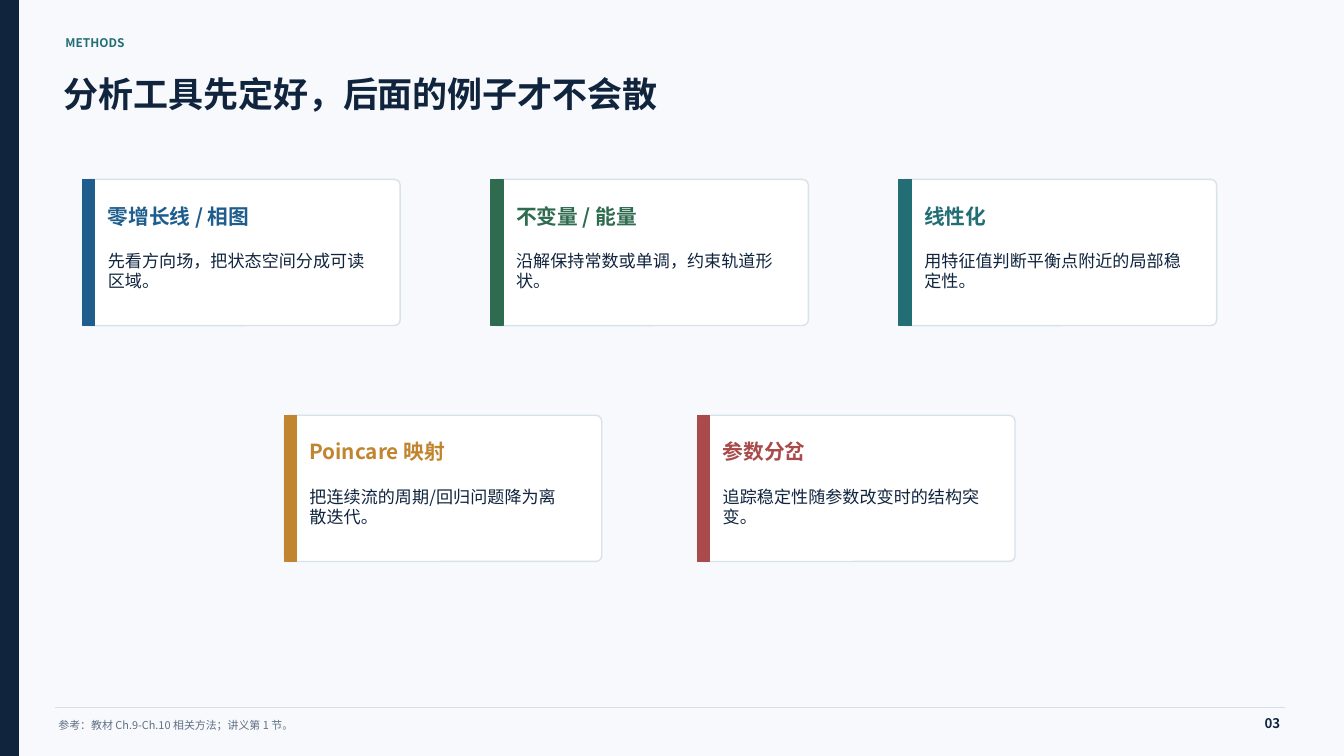
import pptx
import pptx.dml.color
import pptx.enum.shapes
import pptx.enum.text
import pptx.util
from lxml import etree
from pptx.oxml.ns import qn

Pt = pptx.util.Pt
RGBColor = pptx.dml.color.RGBColor
SHAPE = pptx.enum.shapes.MSO_SHAPE
ALIGN = pptx.enum.text.PP_ALIGN

FONT = "Noto Sans CJK SC"
PAPER = RGBColor(0xF7, 0xF9, 0xFC)
WHITE = RGBColor(0xFF, 0xFF, 0xFF)
NAVY = RGBColor(0x10, 0x24, 0x3E)
BLUE = RGBColor(0x1F, 0x5D, 0x8C)
GREEN = RGBColor(0x2E, 0x6B, 0x4F)
TEAL = RGBColor(0x22, 0x6E, 0x74)
OCHRE = RGBColor(0xC1, 0x84, 0x2F)
RED = RGBColor(0xA9, 0x4B, 0x4B)
GRAY = RGBColor(0x61, 0x70, 0x85)
BORDER = RGBColor(0xD7, 0xE2, 0xEA)
RULE = RGBColor(0xD6, 0xDE, 0xE8)

CARD_W, CARD_H, BAR_W = 226.8, 104.4, 8.64
CARD_ROWS = [
    (59.04, 128.16, 291.6, [
        ("零增长线 / 相图", "先看方向场，把状态空间分成可读区域。", BLUE),
        ("不变量 / 能量", "沿解保持常数或单调，约束轨道形状。", GREEN),
        ("线性化", "用特征值判断平衡点附近的局部稳定性。", TEAL),
    ]),
    (203.04, 296.64, 295.2, [
        ("Poincare 映射", "把连续流的周期/回归问题降为离散迭代。", OCHRE),
        ("参数分岔", "追踪稳定性随参数改变时的结构突变。", RED),
    ]),
]


def add_box(s, kind, x, y, w, h, fill, line):
    """Add a filled, outlined shape without a shadow."""
    sp = s.shapes.add_shape(kind, Pt(x), Pt(y), Pt(w), Pt(h))
    sp.shadow.inherit = False
    sp.fill.solid()
    sp.fill.fore_color.rgb = fill
    sp.line.color.rgb = line
    sp.line.width = Pt(1)
    return sp


def add_text(s, text, x, y, w, h, size, color, bold=False, align=None):
    """Add a one-paragraph text box, vertically centred and without insets."""
    tf = s.shapes.add_textbox(Pt(x), Pt(y), Pt(w), Pt(h)).text_frame
    tf.word_wrap = True
    tf.margin_left = tf.margin_right = tf.margin_top = tf.margin_bottom = 0
    tf.vertical_anchor = pptx.enum.text.MSO_ANCHOR.MIDDLE
    p = tf.paragraphs[0]
    p.text = text
    p.alignment = align
    p.font.name = FONT
    p.font.size = Pt(size)
    p.font.bold = bold
    p.font.color.rgb = color
    props = p._p.pPr.find(qn("a:defRPr"))
    etree.SubElement(props, qn("a:ea")).set("typeface", FONT)


def add_rule(s, x1, x2, y):
    """Add the thin horizontal line above the footer."""
    line = s.shapes.add_connector(
        pptx.enum.shapes.MSO_CONNECTOR.STRAIGHT, Pt(x1), Pt(y), Pt(x2), Pt(y))
    line.line.color.rgb = RULE
    line.line.width = Pt(0.8)
    etree.SubElement(line._element.spPr, qn("a:effectLst"))


def add_card(s, x, y, title, body, color):
    """Add a method card with its coloured bar, title and description."""
    card = add_box(s, SHAPE.ROUNDED_RECTANGLE, x, y, CARD_W, CARD_H, WHITE, BORDER)
    card.adjustments[0] = 0.04
    add_box(s, SHAPE.RECTANGLE, x, y, BAR_W, CARD_H, color, color)
    add_text(s, title, x + 18, y + 15.84, 183.6, 20.16, 14.8, color, bold=True)
    add_text(s, body, x + 18, y + 48.96, 183.6, 32.4, 12.2, NAVY)


def main():
    """Build the methods slide and save it."""
    prs = pptx.Presentation()
    prs.slide_width, prs.slide_height = Pt(960), Pt(540)
    s = prs.slides.add_slide(prs.slide_layouts[6])
    s.background.fill.solid()
    s.background.fill.fore_color.rgb = PAPER

    add_box(s, SHAPE.RECTANGLE, 0, 0, 12.96, 540, NAVY, NAVY)
    add_text(s, "METHODS", 46.8, 21.6, 165.6, 17.28, 8.5, TEAL, bold=True)
    add_text(s, "分析工具先定好，后面的例子才不会散",
             45.36, 44.64, 849.6, 44.64, 25, NAVY, bold=True)

    for left, top, step, cards in CARD_ROWS:
        for i, (title, body, color) in enumerate(cards):
            add_card(s, left + i * step, top, title, body, color)

    add_rule(s, 39.6, 918, 505.44)
    add_text(s, "参考：教材 Ch.9-Ch.10 相关方法；讲义第 1 节。",
             41.76, 509.76, 756, 15.84, 7.8, GRAY)
    add_text(s, "03", 874.8, 507.6, 39.6, 18, 9.5, NAVY, bold=True, align=ALIGN.RIGHT)
    prs.save("out.pptx")


if __name__ == "__main__":
    main()
